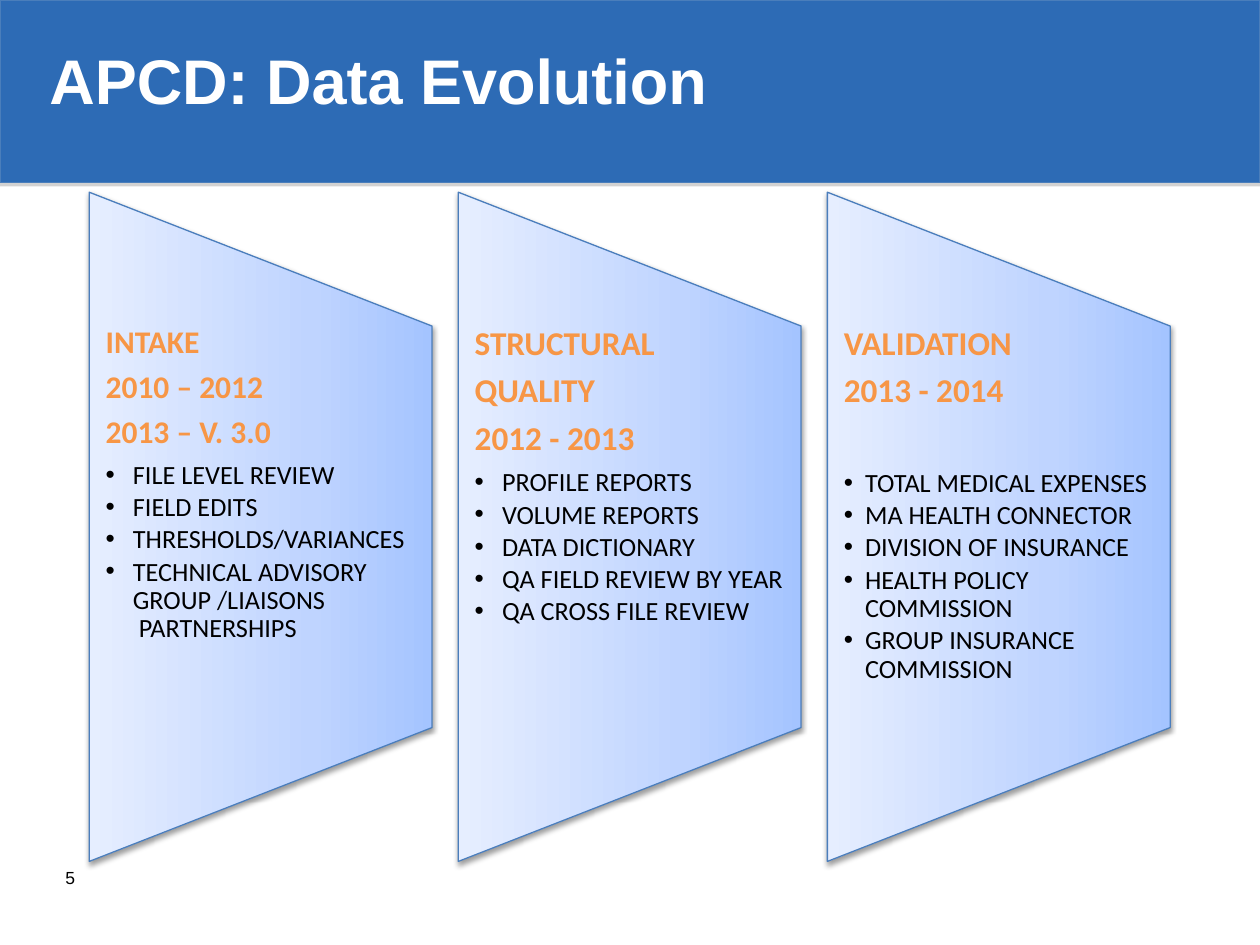
from dataclasses import dataclass

from lxml import etree
from pptx import Presentation
from pptx.dml.color import RGBColor
from pptx.enum import shapes, text
from pptx.oxml import ns
from pptx.util import Cm, Pt


@dataclass(frozen=True)
class Theme:
    band: str = "2D6BB5"
    band_line: str = "4A7EBB"
    panel_line: str = "4B7EBC"
    panel_stops: tuple = ((0, "A4C4FF"), (35, "BFD4FF"), (100, "E6EEFF"))
    heading: str = "F79646"
    body: str = "000000"
    title: str = "FFFFFF"
    title_font: str = "Arial"
    body_font: str = "Calibri"
    title_size: int = 36
    bullet_size: int = 15
    number_size: int = 10


THEME = Theme()

# Panel geometry in cm: the shape is drawn lying down, then turned upright
PANEL_LEFT, PANEL_PITCH, PANEL_WIDTH, PANEL_HEIGHT = 1.8, 7.44, 6.91, 13.49
PANEL_MIDDLE = 10.62
LIST_TOP, LIST_HEIGHT = 6.58, 8.08

# heading size, bullet indent in cm, extra gap after headings in pt, headings, bullets
STAGES = [
    (18, 0.55, 0, ["INTAKE", "2010 – 2012", "2013 – V. 3.0"],
     ["FILE LEVEL REVIEW", "FIELD EDITS", "THRESHOLDS/VARIANCES",
      "TECHNICAL ADVISORY\nGROUP /LIAISONS\n PARTNERSHIPS"]),
    (19, 0.55, 0, ["STRUCTURAL", "QUALITY", "2012 - 2013"],
     ["PROFILE REPORTS", "VOLUME REPORTS", "DATA DICTIONARY",
      "QA FIELD REVIEW BY YEAR", "QA CROSS FILE REVIEW"]),
    (19, 0.43, 27.5, ["VALIDATION", "2013 - 2014"],
     ["TOTAL MEDICAL EXPENSES", "MA HEALTH CONNECTOR", "DIVISION OF INSURANCE",
      "HEALTH POLICY\nCOMMISSION", "GROUP INSURANCE\nCOMMISSION"]),
]


def place(shape, left, top, width, height):
    shape.left, shape.top = Cm(left), Cm(top)
    shape.width, shape.height = Cm(width), Cm(height)


def bring_to_front(slide, shape):
    slide.shapes._spTree.append(shape._element)


def add_run(paragraph, words, font, size, color, bold=False):
    run = paragraph.add_run()
    run.text = words
    run.font.name, run.font.size, run.font.bold = font, Pt(size), bold
    run.font.color.rgb = RGBColor.from_string(color)


def add_outlined(slide, preset, box, line_color):
    shape = slide.shapes.add_shape(preset, *map(Cm, box))
    shape.line.color.rgb = RGBColor.from_string(line_color)
    shape.line.width = Pt(0.75)
    return shape


def add_shadow(shape, color, opacity, blur, distance):
    shape.shadow.inherit = False
    effects = shape._element.spPr.find(ns.qn("a:effectLst"))
    shadow = etree.SubElement(
        effects, ns.qn("a:outerShdw"), blurRad=str(Pt(blur)),
        dist=str(Pt(distance)), dir="5400000", rotWithShape="0")
    tint = etree.SubElement(shadow, ns.qn("a:srgbClr"), val=color)
    etree.SubElement(tint, ns.qn("a:alpha"), val=str(opacity * 1000))


def fill_gradient(shape, stops, angle):
    shape.fill.gradient()
    shape.fill.gradient_angle = angle
    stop_list = shape._element.spPr.find(".//" + ns.qn("a:gsLst"))
    for old_stop in list(stop_list):
        stop_list.remove(old_stop)
    for position, color in stops:
        stop = etree.SubElement(stop_list, ns.qn("a:gs"), pos=str(position * 1000))
        etree.SubElement(stop, ns.qn("a:srgbClr"), val=color)


def add_header(slide, words):
    band = add_outlined(slide, shapes.MSO_SHAPE.RECTANGLE, (0, 0, 25.4, 3.68),
                        THEME.band_line)
    band.fill.solid()
    band.fill.fore_color.rgb = RGBColor.from_string(THEME.band)
    add_shadow(band, "808080", 35, 0, 1.8)

    title = slide.shapes.title
    place(title, 0.74, 0, 22.86, 3.18)
    frame = title.text_frame
    frame.auto_size = text.MSO_AUTO_SIZE.NONE
    frame.vertical_anchor = text.MSO_ANCHOR.MIDDLE
    paragraph = frame.paragraphs[0]
    paragraph.alignment = text.PP_ALIGN.LEFT
    add_run(paragraph, words, THEME.title_font, THEME.title_size, THEME.title, True)
    bring_to_front(slide, title)


def add_panel(slide, left):
    center = left + PANEL_WIDTH / 2
    box = (center - PANEL_HEIGHT / 2, PANEL_MIDDLE - PANEL_WIDTH / 2,
           PANEL_HEIGHT, PANEL_WIDTH)
    panel = add_outlined(slide, shapes.MSO_SHAPE.FLOWCHART_MANUAL_OPERATION, box,
                         THEME.panel_line)
    panel.rotation = 270
    fill_gradient(panel, THEME.panel_stops, 90)
    add_shadow(panel, "000000", 38, 3.1, 1.6)


def set_bullet(paragraph, indent):
    properties = paragraph._p.get_or_add_pPr()
    properties.set("marL", str(Cm(indent)))
    properties.set("indent", str(-Cm(indent)))
    if indent:
        etree.SubElement(properties, ns.qn("a:buFont"), typeface="Arial")
        etree.SubElement(properties, ns.qn("a:buChar"), char="•")
    else:
        etree.SubElement(properties, ns.qn("a:buNone"))


def add_entry(frame, words, size, color, bold, space_after, indent=0):
    first = frame.paragraphs[0]
    paragraph = frame.add_paragraph() if first.runs else first
    set_bullet(paragraph, indent)
    paragraph.alignment = text.PP_ALIGN.LEFT
    paragraph.line_spacing = 0.9
    paragraph.space_before, paragraph.space_after = Pt(0), Pt(space_after)
    for number, line in enumerate(words.split("\n")):
        if number:
            paragraph.add_line_break()
        add_run(paragraph, line, THEME.body_font, size, color, bold)


def fill_stage(slide, body, left, stage):
    heading_size, indent, gap, headings, bullets = stage
    place(body, left, LIST_TOP, PANEL_WIDTH, LIST_HEIGHT)
    bring_to_front(slide, body)
    frame = body.text_frame
    frame.word_wrap = True
    frame.auto_size = text.MSO_AUTO_SIZE.NONE
    frame.vertical_anchor = text.MSO_ANCHOR.TOP
    frame.margin_left, frame.margin_right = Cm(0.33), Cm(0.1)
    frame.margin_top = frame.margin_bottom = 0
    for heading in headings:
        extra = gap if heading == headings[-1] else 0
        add_entry(frame, heading, heading_size, THEME.heading, True,
                  heading_size * 0.35 + extra)
    for bullet in bullets:
        add_entry(frame, bullet, THEME.bullet_size, THEME.body, False,
                  THEME.bullet_size * 0.15, indent)


def add_page_number(slide, number):
    box = slide.shapes.add_textbox(Cm(1.07), Cm(17.35), Cm(5.92), Cm(1.02))
    box.text_frame.word_wrap = True
    add_run(box.text_frame.paragraphs[0], number, THEME.title_font,
            THEME.number_size, THEME.body)


def main():
    deck = Presentation()
    deck.slide_width, deck.slide_height = Cm(25.4), Cm(19.05)
    slide = deck.slides.add_slide(deck.slide_layouts.get_by_name("Comparison"))
    *bodies, spare = list(slide.placeholders)[1:]
    spare._element.getparent().remove(spare._element)

    # Header band and page number
    add_header(slide, "APCD: Data Evolution")
    add_page_number(slide, "5")

    # One panel with its list per stage
    for column, (body, stage) in enumerate(zip(bodies, STAGES)):
        left = PANEL_LEFT + column * PANEL_PITCH
        add_panel(slide, left)
        fill_stage(slide, body, left, stage)

    deck.save("out.pptx")


if __name__ == "__main__":
    main()
